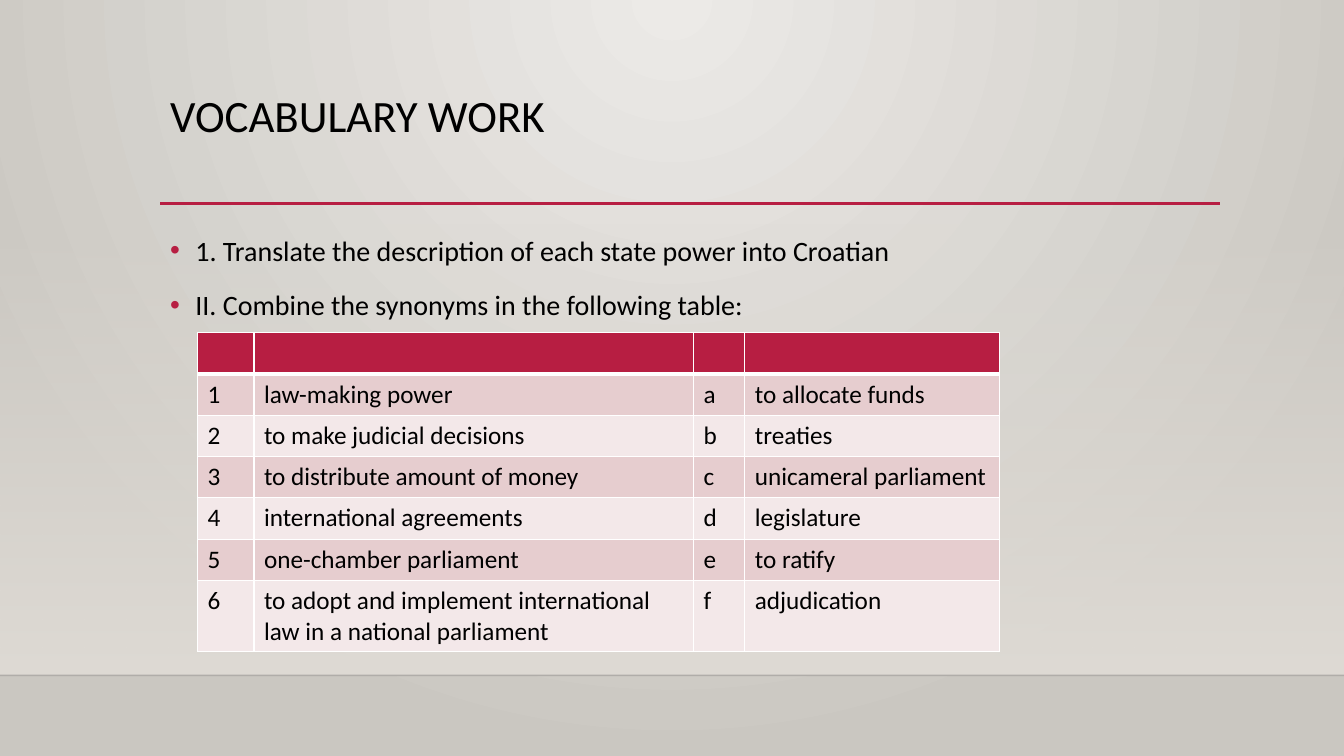
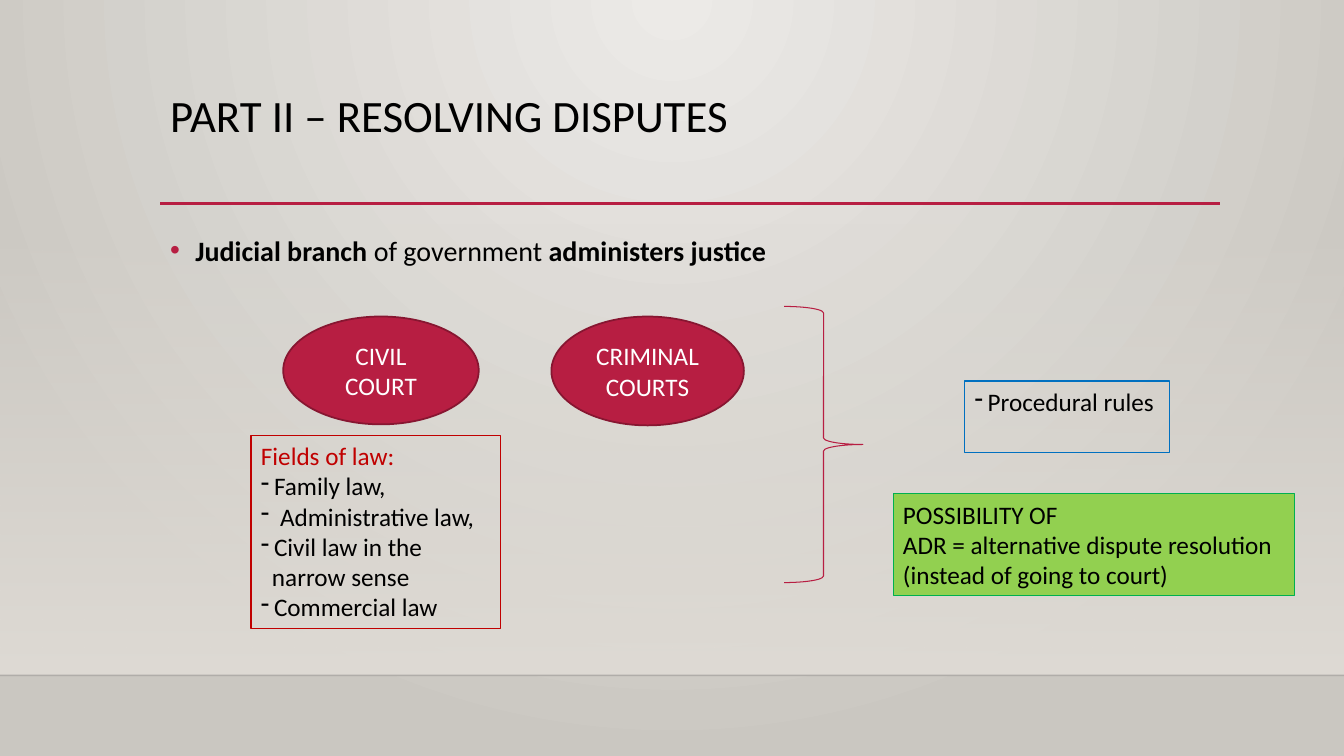
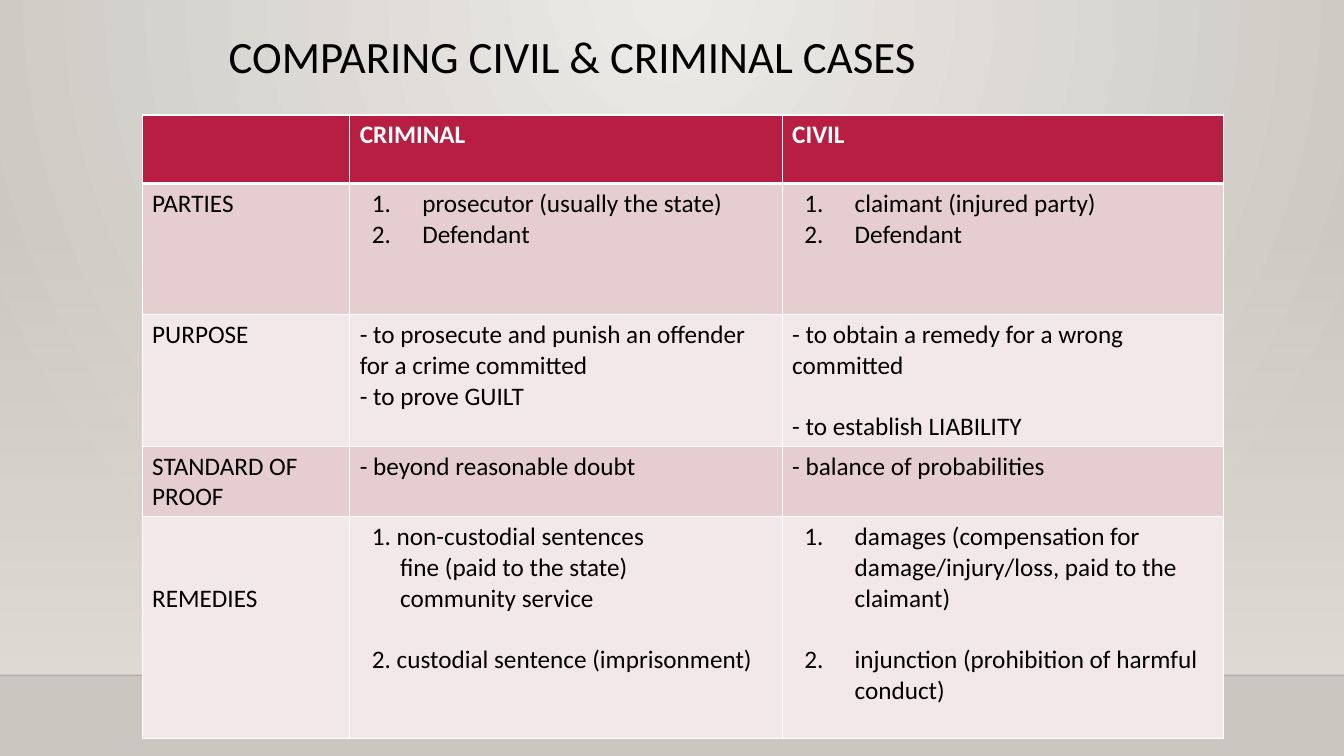
import dataclasses

import lxml.etree
import pptx
import pptx.dml.color
import pptx.enum.dml
import pptx.enum.shapes
import pptx.enum.text
import pptx.oxml.ns
import pptx.util

RGBColor = pptx.dml.color.RGBColor
MSO_SHAPE = pptx.enum.shapes.MSO_SHAPE
ALIGN = pptx.enum.text.PP_ALIGN
ANCHOR = pptx.enum.text.MSO_ANCHOR
Inches, Pt, qn = pptx.util.Inches, pptx.util.Pt, pptx.oxml.ns.qn

GLOW = RGBColor(0xEC, 0xEA, 0xE7)
EDGE = RGBColor(0xCA, 0xC7, 0xC1)
WALL = RGBColor(0xDF, 0xDB, 0xD5)
FLOOR = RGBColor(0x00, 0x00, 0x01)
BLACK = RGBColor(0x00, 0x00, 0x00)
WHITE = RGBColor(0xFF, 0xFF, 0xFF)
CRIMSON = RGBColor(0xB7, 0x1E, 0x42)
DARK_CRIMSON = RGBColor(0x87, 0x16, 0x31)
ROSE = RGBColor(0xE6, 0xCD, 0xCF)
PALE_ROSE = RGBColor(0xF3, 0xE8, 0xE9)
RED = RGBColor(0xC0, 0x00, 0x00)
BLUE = RGBColor(0x00, 0x70, 0xC0)
LIME = RGBColor(0x92, 0xD0, 0x50)
GREEN = RGBColor(0x00, 0xB0, 0x50)

FONT = "Calibri"
COLS, ROWS = 40, 22.5
LEFT, WIDTH = 4.77, 31.5
BLANK_LINE = 22


@dataclasses.dataclass
class Para:
    """A paragraph; text between asterisks is bold, indents are in inches."""
    text: str
    mark: str = ""
    left: float = 0
    hang: float = 0
    before: float = 0
    color: RGBColor = None


def sub(parent, tag, **attrs):
    """Append a child element and return it."""
    return lxml.etree.SubElement(parent, qn(tag), attrs)


def dash(text, left=0.13):
    """Return a paragraph led by a dash."""
    return Para(text, "-", left, left)


def numbered(text, before=0):
    """Return an automatically numbered paragraph."""
    return Para(text, "1.", 0.62, 0.5, before)


class Deck:
    """Holds the shared style and the current slide."""

    def __init__(self):
        """Set the slide size and the background."""
        self.prs = pptx.Presentation()
        self.prs.slide_width = Inches(COLS / 3)
        self.prs.slide_height = Inches(ROWS / 3)
        master = self.prs.slide_master
        self.gradient(master.background.fill, GLOW, EDGE)
        grad = master.element.xpath(".//p:bg//a:gradFill")[0]
        grad.remove(grad.find(qn("a:lin")))
        circle = sub(grad, "a:path", path="circle")
        sub(circle, "a:fillToRect", l="43000", t="0", r="43000", b="100000")

    def grid(self, *cells):
        """Turn grid columns or rows into lengths."""
        return [Inches(c / 3) for c in cells]

    def gradient(self, fill, first, last):
        """Give a fill two gradient stops."""
        fill.gradient()
        for stop, color in zip(fill.gradient_stops, (first, last)):
            stop.color.rgb = color

    def slide(self, title, at=(LEFT, 2.64, WIDTH, 3.45)):
        """Start a slide with its wall, floor line, rule and title."""
        self.s = self.prs.slides.add_slide(self.prs.slide_layouts[6])
        wall = self.shape(MSO_SHAPE.RECTANGLE, (0, 6.63, COLS, 13.47))
        self.gradient(wall.fill, WALL, WALL)
        wall.fill.gradient_angle = 270
        sub(wall.element.xpath(".//a:gs/a:srgbClr")[0], "a:alpha", val="0")
        floor = self.line(0, COLS, 20.1, FLOOR, 1)
        sub(floor.element.xpath(".//a:ln//a:srgbClr")[0], "a:alpha", val="20000")
        self.line(LEFT, 36.3, 6.06, CRIMSON, 2.5)
        self.text(at, [Para(title)], size=32, spacing=0.9)

    def line(self, x1, x2, y, color, width):
        """Draw a horizontal line."""
        kind = pptx.enum.shapes.MSO_CONNECTOR.STRAIGHT
        sp = self.s.shapes.add_connector(kind, *self.grid(x1, y, x2, y))
        sp.line.color.rgb = color
        sp.line.width = Pt(width)
        sub(sp.element.spPr, "a:effectLst")
        return sp

    def paint(self, sp, fill, line, width):
        """Set the fill and outline of a shape."""
        if fill is None:
            sp.fill.background()
        else:
            sp.fill.solid()
            sp.fill.fore_color.rgb = fill
        if line is None:
            sp.line.fill.background()
        else:
            sp.line.color.rgb = line
            sp.line.width = Pt(width)

    def shape(self, kind, at, fill=None, line=None, width=0.75):
        """Add a preset shape without shadow."""
        sp = self.s.shapes.add_shape(kind, *self.grid(*at))
        sp.shadow.inherit = False
        self.paint(sp, fill, line, width)
        return sp

    def ellipse(self, at, lines):
        """Add a crimson ellipse with centred text."""
        sp = self.shape(MSO_SHAPE.OVAL, at, CRIMSON, DARK_CRIMSON, 1.25)
        sp.text_frame.vertical_anchor = ANCHOR.MIDDLE
        paras = [Para(t, color=WHITE) for t in lines]
        self.set_paras(sp.text_frame, paras, align=ALIGN.CENTER)

    def text(self, at, paras, fill=None, line=None, **style):
        """Add a text box, framed or filled if asked."""
        sp = self.s.shapes.add_textbox(*self.grid(*at))
        self.paint(sp, fill, line, 0.75)
        sp.text_frame.word_wrap = True
        self.set_paras(sp.text_frame, paras, **style)

    def body(self, height, *texts):
        """Add the bulleted body text."""
        paras = [Para(t, "•", 0.25, 0.25, 10 if i else 0) for i, t in enumerate(texts)]
        self.text((LEFT, 6.6, WIDTH, height), paras, size=20, spacing=1.2)

    def set_paras(self, tf, paras, size=18, spacing=None, align=ALIGN.LEFT):
        """Fill a text frame with paragraphs."""
        for i, para in enumerate(paras):
            p = tf.add_paragraph() if i else tf.paragraphs[0]
            p.alignment = align
            self.mark(p, para)
            if spacing:
                p.line_spacing = spacing
            if para.before:
                p.space_before = Pt(para.before)
            for j, part in enumerate(para.text.split("*")):
                if part:
                    r = p.add_run()
                    r.text = part
                    r.font.name = FONT
                    r.font.size = Pt(size)
                    r.font.bold = j % 2 == 1
                    r.font.color.rgb = para.color or BLACK

    def mark(self, p, para):
        """Set the indents and the bullet or number of a paragraph."""
        pPr = p._p.get_or_add_pPr()
        pPr.set("marL", str(Inches(para.left)))
        pPr.set("indent", str(-Inches(para.hang)))
        if para.mark == "•":
            sub(sub(pPr, "a:buClr"), "a:srgbClr", val=str(CRIMSON))
            sub(pPr, "a:buFont", typeface="Arial")
        if para.mark == "1.":
            sub(pPr, "a:buAutoNum", type="arabicPeriod")
        elif para.mark:
            sub(pPr, "a:buChar", char=para.mark)
        else:
            sub(pPr, "a:buNone")

    def table(self, left, top, cols, heights, rows):
        """Add a table with a crimson header and striped rows."""
        at = self.grid(left, top, sum(cols), sum(heights))
        tbl = self.s.shapes.add_table(len(rows), len(cols), *at).table
        for column, w in zip(tbl.columns, self.grid(*cols)):
            column.width = w
        for row, h in zip(tbl.rows, self.grid(*heights)):
            row.height = h
        for i, row in enumerate(rows):
            for j, content in enumerate(row):
                cell = tbl.cell(i, j)
                cell.fill.solid()
                cell.fill.fore_color.rgb = (ROSE if i % 2 else PALE_ROSE) if i else CRIMSON
                self.borders(cell, 3 if i == 1 else 1, 1 if i else 3)
                paras = [Para(content)] if isinstance(content, str) else content
                if i == 0:
                    paras = [dataclasses.replace(p, color=WHITE) for p in paras]
                self.set_paras(cell.text_frame, paras)
        return tbl

    def borders(self, cell, top, bottom):
        """Give a cell white borders."""
        tcPr = cell._tc.get_or_add_tcPr()
        for i, (side, width) in enumerate(zip("LRTB", (1, 1, top, bottom))):
            ln = sub(tcPr, f"a:ln{side}", w=str(Pt(width)))
            sub(sub(ln, "a:solidFill"), "a:srgbClr", val=str(WHITE))
            tcPr.insert(i, ln)


def vocabulary(deck):
    """Build the synonym exercise."""
    deck.slide("VOCABULARY WORK")
    deck.body(12.6, "1. Translate the description of each state power into Croatian",
              "II. Combine the synonyms in the following table:")
    pairs = [
        ("law-making power", "to allocate funds"),
        ("to make judicial decisions", "treaties"),
        ("to distribute amount of money", "unicameral parliament"),
        ("international agreements", "legislature"),
        ("one-chamber parliament", "to ratify"),
        ("to adopt and implement international law in a national parliament", "adjudication"),
    ]
    rows = [[""] * 4]
    rows += [[str(i + 1), a, "abcdef"[i], b] for i, (a, b) in enumerate(pairs)]
    deck.table(5.88, 9.9, (1.68, 13.08, 1.53, 7.59), [1.23] * len(rows), rows)


def disputes(deck):
    """Build the overview of courts."""
    deck.slide("PART II – RESOLVING DISPUTES")
    deck.body(11.31, "*Judicial branch* of government *administers justice*")
    deck.ellipse((8.43, 9.42, 5.82, 3.21), ["CIVIL COURT"])
    deck.ellipse((16.41, 9.42, 5.73, 3.24), ["CRIMINAL", "COURTS"])
    deck.text((7.47, 12.96, 7.44, 5.76), [
        Para("Fields of law:", color=RED),
        dash("Family law,"),
        dash("Administrative law,", 0.19),
        dash("Civil law in the"),
        Para("narrow sense", left=0.11),
        dash("Commercial law"),
    ], line=RED)
    deck.shape(MSO_SHAPE.RIGHT_BRACE, (23.34, 9.12, 2.34, 8.22), line=CRIMSON)
    deck.text((28.71, 11.34, 6.09, 2.13), [dash("Procedural rules")], line=BLUE)
    deck.text((26.58, 14.7, 11.94, 3.03), [
        Para("POSSIBILITY OF"),
        Para("ADR = alternative dispute resolution"),
        Para("(instead of going to court)"),
    ], LIME, GREEN)


def comparison(deck):
    """Build the table of civil and criminal cases."""
    deck.slide("COMPARING CIVIL & CRIMINAL CASES", (6.51, 0.9, 27, 2.85))
    rows = [
        ["", "*CRIMINAL*", "*CIVIL*"],
        ["PARTIES",
         [numbered("prosecutor (usually the state)"), numbered("Defendant")],
         [numbered("claimant (injured party)"), numbered("Defendant")]],
        ["PURPOSE",
         [Para("- to prosecute and punish an offender for a crime committed"),
          Para("- to prove GUILT")],
         [Para("- to obtain a remedy for a wrong committed"),
          Para("- to establish LIABILITY", before=BLANK_LINE)]],
        ["STANDARD OF PROOF", "- beyond reasonable doubt", "- balance of probabilities"],
        ["REMEDIES",
         [Para("1. non-custodial sentences", left=0.12),
          Para("fine (paid to the state)", left=0.4),
          Para("community service", left=0.4),
          Para("2. custodial sentence (imprisonment)", left=0.12, before=BLANK_LINE)],
         [numbered("damages (compensation for damage/injury/loss, paid to the claimant)"),
          numbered("injunction (prohibition of harmful conduct)", BLANK_LINE)]],
    ]
    tbl = deck.table(4.23, 3.42, (6.18, 12.87, 13.14), (2.04, 3.9, 3.9, 2.1, 6.6), rows)
    tbl.cell(4, 0).margin_top = Inches(0.66)


def main():
    """Build and save the deck."""
    deck = Deck()
    for build in (vocabulary, disputes, comparison):
        build(deck)
    deck.prs.save("out.pptx")


if __name__ == "__main__":
    main()
